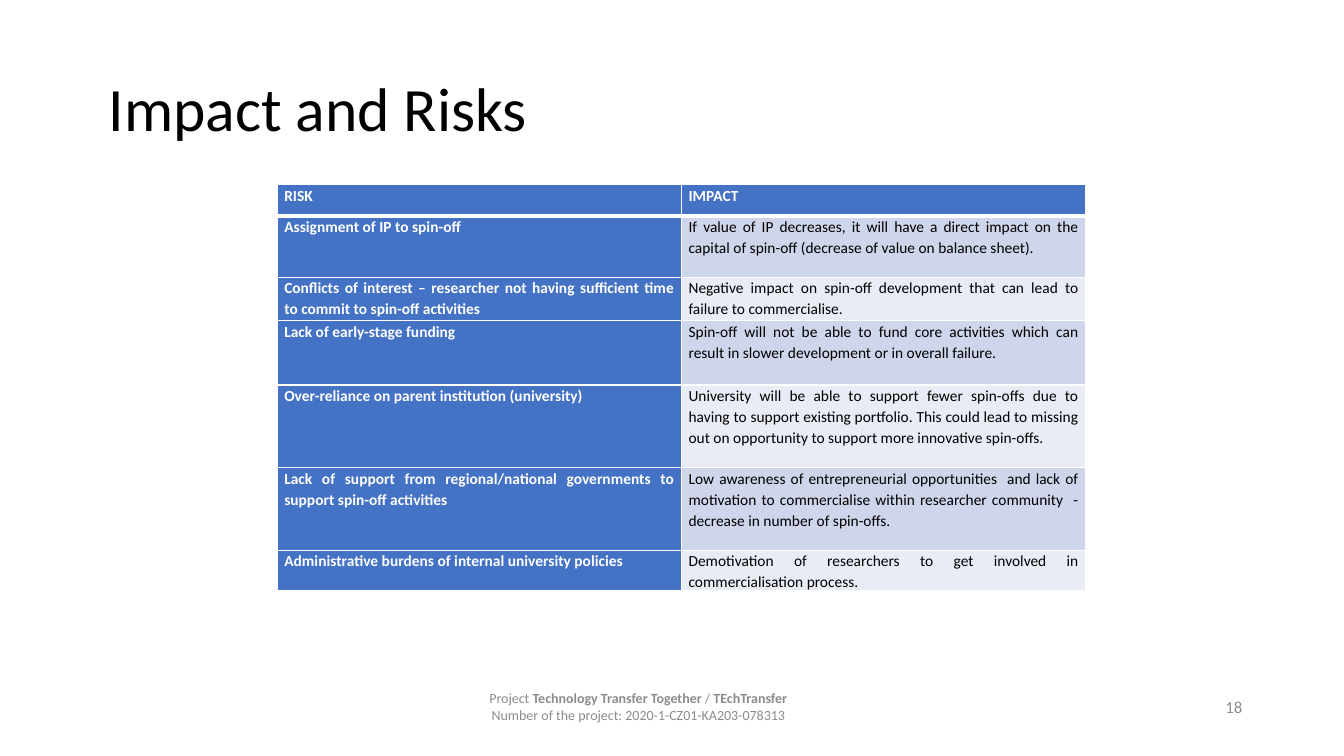
from lxml.etree import SubElement
from pptx import Presentation
from pptx.dml.color import RGBColor
from pptx.enum.text import MSO_ANCHOR, PP_ALIGN
from pptx.oxml.ns import qn
from pptx.util import Inches, Pt

BLACK = RGBColor(0x00, 0x00, 0x00)
WHITE = RGBColor(0xFF, 0xFF, 0xFF)
GREY = RGBColor(0x8C, 0x8C, 0x8C)
BLUE = RGBColor(0x44, 0x72, 0xC4)
BAND_DARK = RGBColor(0xCF, 0xD5, 0xEA)
BAND_LIGHT = RGBColor(0xE9, 0xEB, 0xF5)
FONT = "Calibri"

ROWS = [
    ("RISK", "IMPACT", 0.31),
    ("Assignment of IP to spin-off",
     "If value of IP decreases, it will have a direct impact on the capital of "
     "spin-off (decrease of value on balance sheet).", 0.61),
    ("Conflicts of interest – researcher not having sufficient time to commit to "
     "spin-off activities",
     "Negative impact on spin-off development that can lead to failure to "
     "commercialise.", 0.43),
    ("Lack of early-stage funding",
     "Spin-off will not be able to fund core activities which can result in slower "
     "development or in overall failure.", 0.64),
    ("Over-reliance on parent institution (university)",
     "University will be able to support fewer spin-offs due to having to support "
     "existing portfolio. This could lead to missing out on opportunity to support "
     "more innovative spin-offs.", 0.82),
    ("Lack of support from regional/national governments to support spin-off "
     "activities",
     "Low awareness of entrepreneurial opportunities  and lack of motivation to "
     "commercialise within researcher community  - decrease in number of "
     "spin-offs.", 0.82),
    ("Administrative burdens of internal university policies",
     "Demotivation of researchers to get involved in commercialisation process.",
     0.4),
]

FOOTER = [
    [("Project ", False), ("Technology Transfer Together", True), (" / ", False),
     ("TEchTransfer", True)],
    [("Number of the project: 2020-1-CZ01-KA203-078313", False)],
]


def style_run(r, size, color, bold=False):
    """Set the font of a run."""
    r.font.name = FONT
    r.font.size = Pt(size)
    r.font.bold = bold
    r.font.color.rgb = color


def add_text(slide, box, lines, size, color, align, spacing=1.0):
    """Add a middle-anchored text box with lines of (text, bold) runs."""
    tf = slide.shapes.add_textbox(*map(Inches, box)).text_frame
    tf.word_wrap = True
    tf.vertical_anchor = MSO_ANCHOR.MIDDLE
    for i, line in enumerate(lines):
        p = tf.paragraphs[0] if i == 0 else tf.add_paragraph()
        p.alignment = align
        p.line_spacing = spacing
        for text, bold in line:
            r = p.add_run()
            r.text = text
            style_run(r, size, color, bold)


def set_borders(cell, is_header):
    """Draw white cell borders, thicker beside the header's lower edge."""
    tcPr = cell._tc.get_or_add_tcPr()
    for i, side in enumerate(("lnL", "lnR", "lnT", "lnB")):
        width = Pt(3) if is_header and side == "lnB" else Pt(1)
        ln = SubElement(tcPr, qn(f"a:{side}"), w=str(width))
        fill = SubElement(ln, qn("a:solidFill"))
        SubElement(fill, qn("a:srgbClr"), val=str(WHITE))
        tcPr.remove(ln)
        tcPr.insert(i, ln)


def fill_cell(cell, text, row, col):
    """Write and style one table cell."""
    strong = row == 0 or col == 0
    cell.margin_left = cell.margin_right = Inches(0.07)
    cell.margin_top = cell.margin_bottom = 0
    cell.fill.solid()
    band = BAND_DARK if row % 2 else BAND_LIGHT
    cell.fill.fore_color.rgb = BLUE if strong else band
    set_borders(cell, row == 0)
    p = cell.text_frame.paragraphs[0]
    p.text = text
    p.alignment = PP_ALIGN.JUSTIFY
    p.line_spacing = 1.1
    p.space_after = Pt(6)
    style_run(p.runs[0], 11, WHITE if strong else BLACK, strong)


def add_risk_table(slide, box):
    """Add the table of risks and their impact."""
    table = slide.shapes.add_table(len(ROWS), 2, *map(Inches, box)).table
    table.first_col = True
    for i, (risk, impact, height) in enumerate(ROWS):
        table.rows[i].height = Inches(height)
        for j, text in enumerate((risk, impact)):
            fill_cell(table.cell(i, j), text, i, j)


def add_footer(slide, left, top):
    """Add the project line and the slide number."""
    add_text(slide, (left, top, 3.82, 0.39), FOOTER, 10, GREY, PP_ALIGN.CENTER)
    add_text(slide, (left + 7.11, top, 0.89, 0.4), [[("18", False)]], 12, GREY,
             PP_ALIGN.RIGHT)


def main():
    """Build the slide and save it."""
    prs = Presentation()
    prs.slide_width = Inches(13.33)
    prs.slide_height = Inches(7.5)
    slide = prs.slides.add_slide(prs.slide_layouts[6])
    add_text(slide, (0.98, 0.38, 12.06, 1.45), [[("Impact and Risks", False)]],
             44, BLACK, PP_ALIGN.LEFT, 0.9)
    add_risk_table(slide, (2.75, 1.83, 8.02, 4.02))
    add_footer(slide, 4.42, 6.81)
    prs.save("out.pptx")


if __name__ == "__main__":
    main()
